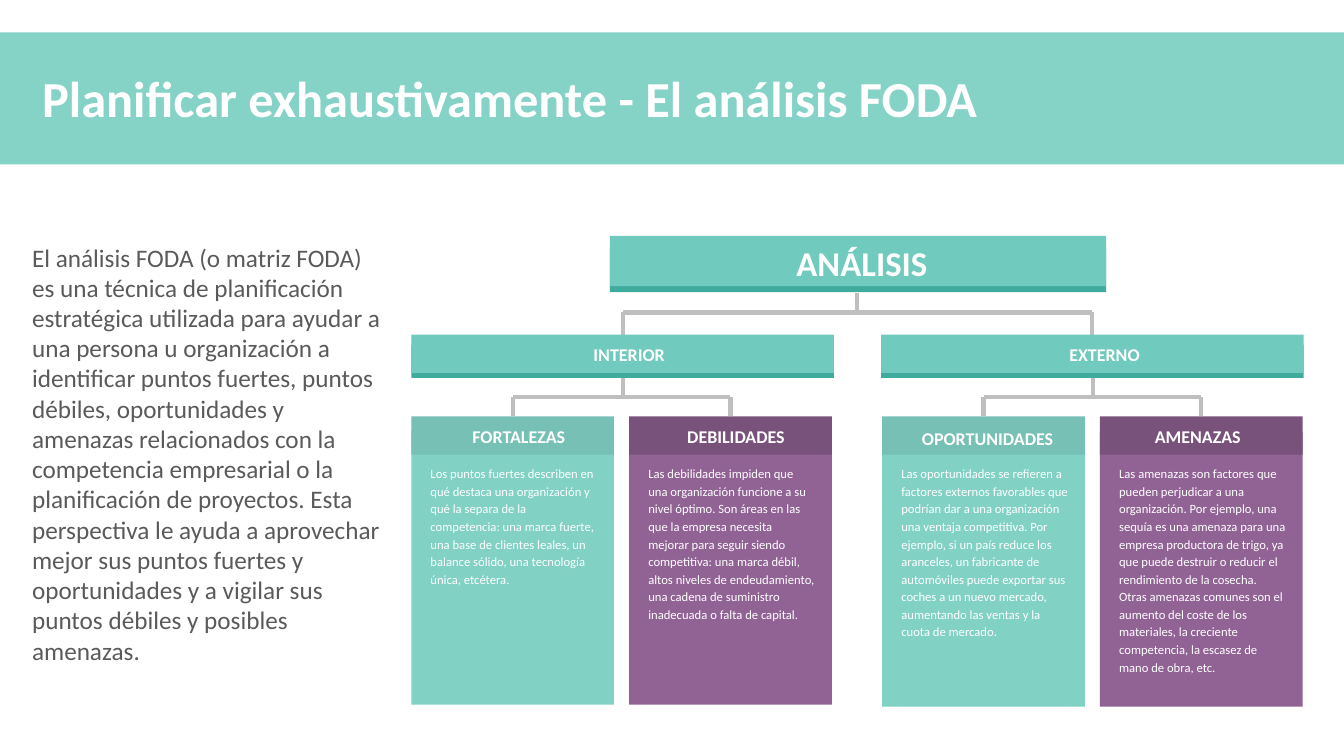
from lxml import etree
from pptx import Presentation
from pptx.dml.color import RGBColor
from pptx.enum import shapes, text
from pptx.oxml.ns import qn
from pptx.util import Inches, Pt

WHITE = "FFFFFF"
TEAL, TEAL_EDGE = "70CABD", "3FAB9C"
GREEN, GREEN_HEAD = "81D1C5", "76C0B5"
PURPLE, PURPLE_HEAD = "916395", "79527B"
CARD_WIDTH = 2.01

INTRO = (
    "El análisis FODA (o matriz FODA) es una técnica de planificación estratégica utilizada "
    "para ayudar a una persona u organización a identificar puntos fuertes, puntos débiles, "
    "oportunidades y amenazas relacionados con la competencia empresarial o la planificación "
    "de proyectos. Esta perspectiva le ayuda a aprovechar mejor sus puntos fuertes y "
    "oportunidades y a vigilar sus puntos débiles y posibles amenazas."
)
STRENGTHS = (
    "Los puntos fuertes describen en qué destaca una organización y qué la separa de la "
    "competencia: una marca fuerte, una base de clientes leales, un balance sólido, una "
    "tecnología única, etcétera."
)
WEAKNESSES = (
    "Las debilidades impiden que una organización funcione a su nivel óptimo. Son áreas en "
    "las que la empresa necesita mejorar para seguir siendo competitiva: una marca débil, "
    "altos niveles de endeudamiento, una cadena de suministro inadecuada o falta de capital."
)
OPPORTUNITIES = (
    "Las oportunidades se refieren a factores externos favorables que podrían dar a una "
    "organización una ventaja competitiva. Por ejemplo, si un país reduce los aranceles, un "
    "fabricante de automóviles puede exportar sus coches a un nuevo mercado, aumentando las "
    "ventas y la cuota de mercado."
)
THREATS = (
    "Las amenazas son factores que pueden perjudicar a una organización. Por ejemplo, una "
    "sequía es una amenaza para una empresa productora de trigo, ya que puede destruir o "
    "reducir el rendimiento de la cosecha. Otras amenazas comunes son el aumento del coste "
    "de los materiales, la creciente competencia, la escasez de mano de obra, etc."
)

BRANCHES = [
    ("INTERIOR", 4.08, (5.72, 3.35, 1.04, 0.32), 6.18),
    ("EXTERNO", 8.74, (10.38, 3.35, 1.15, 0.32), 10.84),
]
CARDS = [
    ("FORTALEZAS", 4.08, 4.27, (4.57, 4.17, 1.15, 0.32), GREEN, GREEN_HEAD, STRENGTHS),
    ("DEBILIDADES", 6.24, 4.27, (6.68, 4.17, 1.24, 0.32), PURPLE, PURPLE_HEAD, WEAKNESSES),
    ("OPORTUNIDADES", 8.75, 4.29, (8.88, 4.19, 1.83, 0.32), GREEN, GREEN_HEAD, OPPORTUNITIES),
    ("AMENAZAS", 10.91, 4.29, (11.26, 4.17, 1.24, 0.32), PURPLE, PURPLE_HEAD, THREATS),
]


def color(value):
    return RGBColor.from_string(value)


def add_bar(page, left, top, width, height, fill):
    bar = page.shapes.add_shape(
        shapes.MSO_SHAPE.RECTANGLE, Inches(left), Inches(top), Inches(width), Inches(height)
    )
    bar.shadow.inherit = False
    bar.fill.solid()
    bar.fill.fore_color.rgb = color(fill)
    bar.line.fill.background()


def add_line(page, start_x, start_y, end_x, end_y):
    line = page.shapes.add_connector(
        shapes.MSO_CONNECTOR.STRAIGHT,
        Inches(start_x), Inches(start_y), Inches(end_x), Inches(end_y),
    )
    line.line.color.rgb = color("BFBFBF")
    line.line.width = Pt(3)
    properties = line._element.find(qn("p:spPr"))
    etree.SubElement(properties, qn("a:effectLst"))


def add_fork(page, stem_x, top, middle, bottom, left, right):
    add_line(page, stem_x, top, stem_x, middle)
    add_line(page, left, middle, right, middle)
    for branch_x in (left, right):
        add_line(page, branch_x, middle, branch_x, bottom)


def add_text(page, place, words, size, ink=WHITE, bold=False, spacing=1.0, insets=(0.1, 0.05)):
    box = page.shapes.add_textbox(*[Inches(length) for length in place])
    frame = box.text_frame
    side, edge = (Inches(inset) for inset in insets)
    frame_format = {
        "word_wrap": True,
        "margin_left": side,
        "margin_right": side,
        "margin_top": edge,
        "margin_bottom": edge,
    }
    for name, value in frame_format.items():
        setattr(frame, name, value)
    para = frame.paragraphs[0]
    para.line_spacing = spacing
    span = para.add_run()
    span.text = words
    font_format = {"name": "Calibri", "size": Pt(size), "bold": bold}
    for name, value in font_format.items():
        setattr(span.font, name, value)
    span.font.color.rgb = color(ink)
    return frame


def add_label(page, place, words, size=12.8):
    frame = add_text(page, place, words, size, bold=True)
    frame.word_wrap = False
    frame.vertical_anchor = text.MSO_ANCHOR.MIDDLE
    frame.paragraphs[0].alignment = text.PP_ALIGN.CENTER


def add_branch(page, name, left, label_place):
    add_bar(page, left, 3.42, 4.19, 0.33, TEAL_EDGE)
    add_bar(page, left, 3.32, 4.19, 0.38, TEAL)
    add_label(page, label_place, name)


def add_card(page, name, left, top, label_place, fill, head_fill, words):
    add_bar(page, left, top, CARD_WIDTH, 2.72, fill)
    add_bar(page, left, 4.13, CARD_WIDTH, 0.38, head_fill)
    add_label(page, label_place, name)
    add_text(page, (left + 0.1, 4.56, 1.83, 2.17), words, 9, spacing=1.16, insets=(0.09, 0.04))


def main():
    deck = Presentation()
    deck.slide_width, deck.slide_height = Inches(13.33), Inches(7.5)
    page = deck.slides.add_slide(deck.slide_layouts[6])

    add_fork(page, 8.5, 2.91, 3.1, 3.32, 6.18, 10.83)
    for index, (name, left, label_place, stem_x) in enumerate(BRANCHES):
        first, second = CARDS[2 * index:2 * index + 2]
        centers = [card[1] + CARD_WIDTH / 2 for card in (first, second)]
        add_fork(page, stem_x, 3.74, 3.94, 4.13, *centers)
        add_branch(page, name, left, label_place)

    add_bar(page, 6.05, 2.47, 4.92, 0.43, TEAL_EDGE)
    add_bar(page, 6.05, 2.34, 4.92, 0.5, TEAL)
    add_label(page, (7.77, 2.34, 1.56, 0.52), "ANÁLISIS", 24.8)

    for card in CARDS:
        add_card(page, *card)

    add_text(page, (0.22, 2.35, 3.7, 3.74), INTRO, 18, ink="595A59")
    add_bar(page, 0, 0.32, 13.33, 1.31, "85D2C7")
    add_text(
        page, (0.32, 0.68, 12.42, 0.98), "Planificar exhaustivamente - El análisis FODA",
        36, bold=True, spacing=0.9,
    )
    deck.save("out.pptx")


if __name__ == "__main__":
    main()
